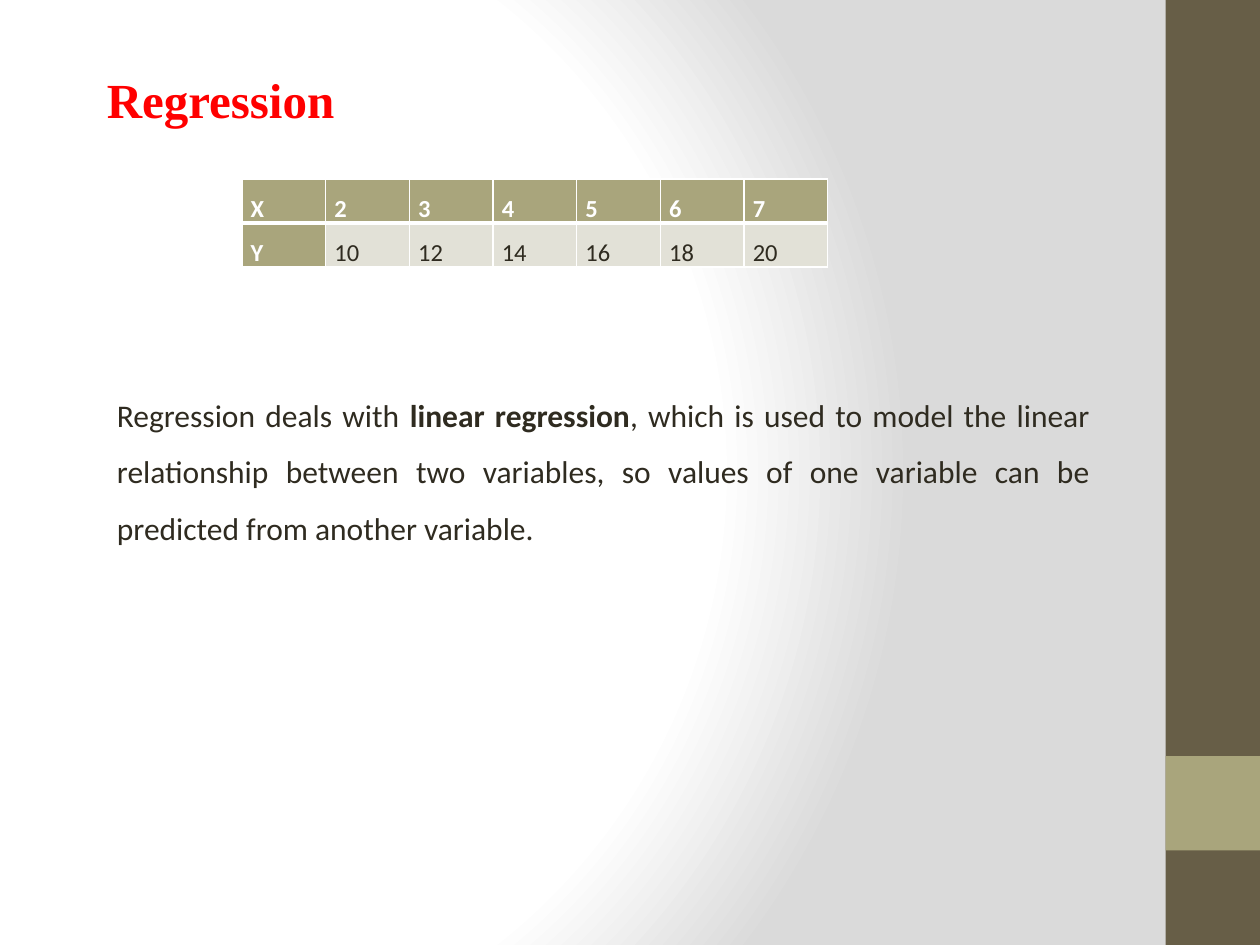
from dataclasses import dataclass

from lxml import etree
from pptx import Presentation
from pptx import util as u
from pptx.dml.color import RGBColor
from pptx.enum import shapes, text
from pptx.oxml import ns


@dataclass(frozen=True)
class Theme:
    white: str = "FFFFFF"
    edge_gray: str = "DADADA"
    brown: str = "675E47"
    olive: str = "A9A57C"
    pale_olive: str = "E2E1D7"
    ink: str = "2F2B20"
    red: str = "FF0000"
    title_font: str = "Times New Roman"
    body_font: str = "Calibri"
    title_size: int = 28
    body_size: int = 18
    table_size: int = 14


THEME = Theme()
VALUES = [
    ["X", "2", "3", "4", "5", "6", "7"],
    ["Y", "10", "12", "14", "16", "18", "20"],
]


def add_element(parent, tag, **attributes):
    return etree.SubElement(parent, ns.qn(tag), attributes)


def add_color(parent, color):
    add_element(parent, "a:srgbClr", val=color)


def set_background(slide):
    """Fill the slide with a circular gradient centred left of the middle."""
    slide.background.fill.solid()
    solid = slide.element.xpath("p:cSld/p:bg/p:bgPr/a:solidFill")[0]
    gradient = etree.Element(ns.qn("a:gradFill"), rotWithShape="1")
    stops = add_element(gradient, "a:gsLst")
    for percent, color in ((0, THEME.white), (75, THEME.white), (100, THEME.edge_gray)):
        add_color(add_element(stops, "a:gs", pos=str(percent * 1000)), color)
    circle = add_element(gradient, "a:path", path="circle")
    add_element(circle, "a:fillToRect", l="20000", t="50000", r="100000", b="50000")
    solid.getparent().replace(solid, gradient)


def add_block(slide, left, top, width, height, color):
    block = slide.shapes.add_shape(
        shapes.MSO_SHAPE.RECTANGLE, *map(u.Inches, (left, top, width, height)))
    block.shadow.inherit = False
    block.fill.solid()
    block.fill.fore_color.rgb = RGBColor.from_string(color)
    block.line.fill.background()


def add_run(paragraph, words, font, size, color, bold=False):
    run = paragraph.add_run()
    run.text = words
    run.font.name = font
    run.font.size = u.Pt(size)
    run.font.bold = bold
    run.font.color.rgb = RGBColor.from_string(color)


def justify(paragraph):
    paragraph.alignment = text.PP_ALIGN.JUSTIFY
    paragraph.line_spacing = 1.5


def add_text(slide, left, top, width, height):
    """Add a wrapping text box and return its first paragraph."""
    box = slide.shapes.add_textbox(*map(u.Inches, (left, top, width, height)))
    box.text_frame.word_wrap = True
    box.text_frame.auto_size = text.MSO_AUTO_SIZE.SHAPE_TO_FIT_TEXT
    return box.text_frame.paragraphs[0]


def set_borders(cell, **widths):
    """Draw white borders; the fill must be set afterwards to follow them."""
    properties = cell._tc.get_or_add_tcPr()
    for side in "LRTB":
        width = u.Pt(widths.get(side, 1))
        border = add_element(properties, f"a:ln{side}", w=str(width))
        add_color(add_element(border, "a:solidFill"), THEME.white)


def fill_cell(cell, words, is_header, fill, **border_widths):
    cell.margin_left = cell.margin_right = u.Inches(0.07)
    cell.margin_top = cell.margin_bottom = 0
    set_borders(cell, **border_widths)
    cell.fill.solid()
    cell.fill.fore_color.rgb = RGBColor.from_string(fill)
    paragraph = cell.text_frame.paragraphs[0]
    justify(paragraph)
    add_run(paragraph, words, THEME.body_font, THEME.table_size,
            THEME.white if is_header else THEME.ink, is_header)


def add_value_table(slide):
    table = slide.shapes.add_table(
        len(VALUES), len(VALUES[0]),
        *map(u.Inches, (1.92, 1.42, 4.65, 0.7))).table
    for row, values in enumerate(VALUES):
        header_edge = {"B": 3} if row == 0 else {"T": 3}
        for column, value in enumerate(values):
            is_header = row == 0 or column == 0
            fill = THEME.olive if is_header else THEME.pale_olive
            fill_cell(table.cell(row, column), value, is_header, fill, **header_edge)


def main():
    deck = Presentation()
    deck.slide_width, deck.slide_height = u.Inches(10), u.Inches(7.5)
    slide = deck.slides.add_slide(deck.slide_layouts[6])
    set_background(slide)
    add_block(slide, 9.25, 0, 0.75, 7.5, THEME.brown)
    add_block(slide, 9.25, 6, 0.75, 0.75, THEME.olive)

    title = add_text(slide, 0.75, 0.5, 5.67, 0.57)
    add_run(title, "Regression", THEME.title_font, THEME.title_size, THEME.red, True)

    add_value_table(slide)

    explanation = add_text(slide, 0.83, 2.94, 7.92, 1.46)
    justify(explanation)
    for words, bold in (
        ("Regression deals with ", False),
        ("linear regression", True),
        (", which is used to model the linear relationship between two variables, "
         "so values of one variable can be predicted from another variable.", False),
    ):
        add_run(explanation, words, THEME.body_font, THEME.body_size, THEME.ink, bold)

    deck.save("out.pptx")


if __name__ == "__main__":
    main()
